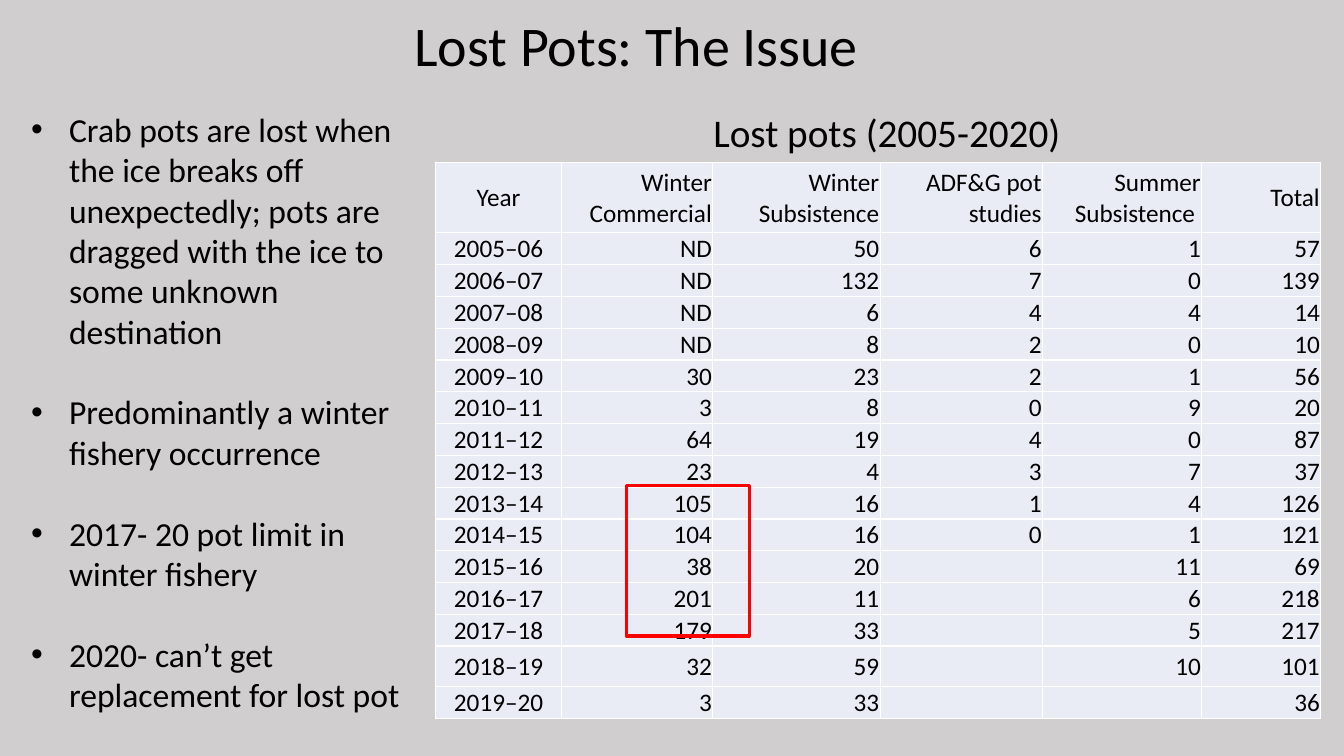
"""Build the slide on lost crab pots, with its bullet list and yearly table."""
from dataclasses import dataclass
from typing import Any

from lxml.etree import SubElement
from pptx import Presentation
from pptx.dml.color import RGBColor
from pptx.enum.shapes import MSO_SHAPE as Shape
from pptx.enum.text import MSO_ANCHOR as Anchor, MSO_AUTO_SIZE as AutoSize, PP_ALIGN as Align
from pptx.oxml.ns import qn
from pptx.util import Inches, Pt

BACKGROUND = RGBColor(0xD0, 0xCE, 0xCE)
CELL_FILL = RGBColor(0xE9, 0xEB, 0xF5)
BLACK = RGBColor(0, 0, 0)
WHITE = RGBColor(0xFF, 0xFF, 0xFF)
RED = RGBColor(0xFF, 0, 0)
FONT = "Calibri"


@dataclass(frozen=True)
class Box:
    left: float
    top: float
    width: float
    height: float

    def lengths(self) -> list[int]:
        return [Inches(n) for n in (self.left, self.top, self.width, self.height)]


@dataclass(frozen=True)
class Column:
    heading: str
    width: float
    values: list[str]
    align: Align = Align.RIGHT


TITLE_BOX = Box(4.01, 0.05, 5.32, 0.77)
BULLETS_BOX = Box(0.21, 1.03, 3.98, 6.16)
CAPTION_BOX = Box(5.74, 1.03, 6.11, 0.57)
TABLE_BOX = Box(4.32, 1.61, 8.8, 5.41)
HIGHLIGHT_BOX = Box(6.21, 4.82, 1.22, 1.49)
HEADING_HEIGHT, TALL_HEIGHT, ROW_HEIGHT = 0.7, 0.4, 0.29
TALL_YEAR = "2018–19"

BULLETS = "\n".join([
    "Crab pots are lost when the ice breaks off unexpectedly; "
    "pots are dragged with the ice to some unknown destination",
    "Predominantly a winter fishery occurrence",
    "2017- 20 pot limit in winter fishery",
    "2020- can’t get replacement for lost pot",
])

YEARS = [f"{year}–{(year + 1) % 100:02d}" for year in range(2005, 2020)]
COLUMNS = [
    Column("Year", 1.25, YEARS, Align.CENTER),
    Column("Winter\nCommercial", 1.5,
           "ND ND ND ND 30 3 64 23 105 104 38 201 179 32 3".split()),
    Column("Winter Subsistence", 1.66,
           "50 132 6 8 23 8 19 4 16 16 20 11 33 59 33".split()),
    Column("ADF&G pot studies", 1.61,
           "6 7 4 2 2 0 4 3 1 0".split() + [""] * 5),
    Column("Summer Subsistence ", 1.58,
           "1 0 4 0 1 9 0 7 4 1 11 6 5 10".split() + [""]),
    Column("Total", 1.18,
           "57 139 14 10 56 20 87 37 126 121 69 218 217 101 36".split()),
]


def write_text(frame: Any, text: str, *, size: float, align: Align = Align.LEFT,
               anchor: Anchor = Anchor.TOP, gap: float = 0) -> None:
    frame.word_wrap = True
    frame.vertical_anchor = anchor
    frame.text = text
    for index, paragraph in enumerate(frame.paragraphs):
        paragraph.alignment = align
        paragraph.space_before = Pt(gap if index else 0)
        paragraph.font.size = Pt(size)
        for run in paragraph.runs:
            run.font.size = Pt(size)
            run.font.name = FONT
            run.font.color.rgb = BLACK


def fill_placeholder(placeholder: Any, box: Box, text: str, **text_format: Any) -> None:
    placeholder.left, placeholder.top, placeholder.width, placeholder.height = box.lengths()
    placeholder.text_frame.auto_size = AutoSize.NONE
    write_text(placeholder.text_frame, text, **text_format)


def add_borders(cell: Any) -> None:
    properties = cell._tc.get_or_add_tcPr()
    for side in ("a:lnL", "a:lnR", "a:lnT", "a:lnB"):
        line = SubElement(properties, qn(side), w=str(Pt(1)))
        SubElement(SubElement(line, qn("a:solidFill")), qn("a:srgbClr"), val=str(WHITE))


def fill_cell(cell: Any, text: str, align: Align) -> None:
    write_text(cell.text_frame, text, size=18, align=align)
    cell.vertical_anchor = Anchor.MIDDLE
    cell.margin_left = cell.margin_top = cell.margin_right = Inches(0.01)
    cell.margin_bottom = 0
    add_borders(cell)
    cell.fill.solid()
    cell.fill.fore_color.rgb = CELL_FILL


def add_pots_table(slide: Any) -> None:
    table = slide.shapes.add_table(len(YEARS) + 1, len(COLUMNS), *TABLE_BOX.lengths()).table
    table.first_row = table.horz_banding = False
    heights = [HEADING_HEIGHT] + [TALL_HEIGHT if year == TALL_YEAR else ROW_HEIGHT
                                  for year in YEARS]
    for row, height in zip(table.rows, heights):
        row.height = Inches(height)
    for column_index, column in enumerate(COLUMNS):
        table.columns[column_index].width = Inches(column.width)
        for row_index, text in enumerate([column.heading, *column.values]):
            fill_cell(table.cell(row_index, column_index), text, column.align)


def add_highlight(slide: Any) -> None:
    shape = slide.shapes.add_shape(Shape.RECTANGLE, *HIGHLIGHT_BOX.lengths())
    shape.shadow.inherit = False
    shape.fill.background()
    shape.line.color.rgb = RED
    shape.line.width = Pt(2.25)


def main() -> None:
    presentation = Presentation()
    presentation.slide_width, presentation.slide_height = Inches(13.33), Inches(7.5)
    slide = presentation.slides.add_slide(presentation.slide_layouts[1])
    slide.background.fill.solid()
    slide.background.fill.fore_color.rgb = BACKGROUND
    fill_placeholder(slide.shapes.title, TITLE_BOX, "Lost Pots: The Issue", size=40)
    fill_placeholder(slide.placeholders[1], BULLETS_BOX, BULLETS, size=24, gap=29)
    add_pots_table(slide)
    caption = slide.shapes.add_textbox(*CAPTION_BOX.lengths())
    write_text(caption.text_frame, "Lost pots (2005-2020)", size=28, align=Align.CENTER)
    add_highlight(slide)
    presentation.save("out.pptx")


if __name__ == "__main__":
    main()
